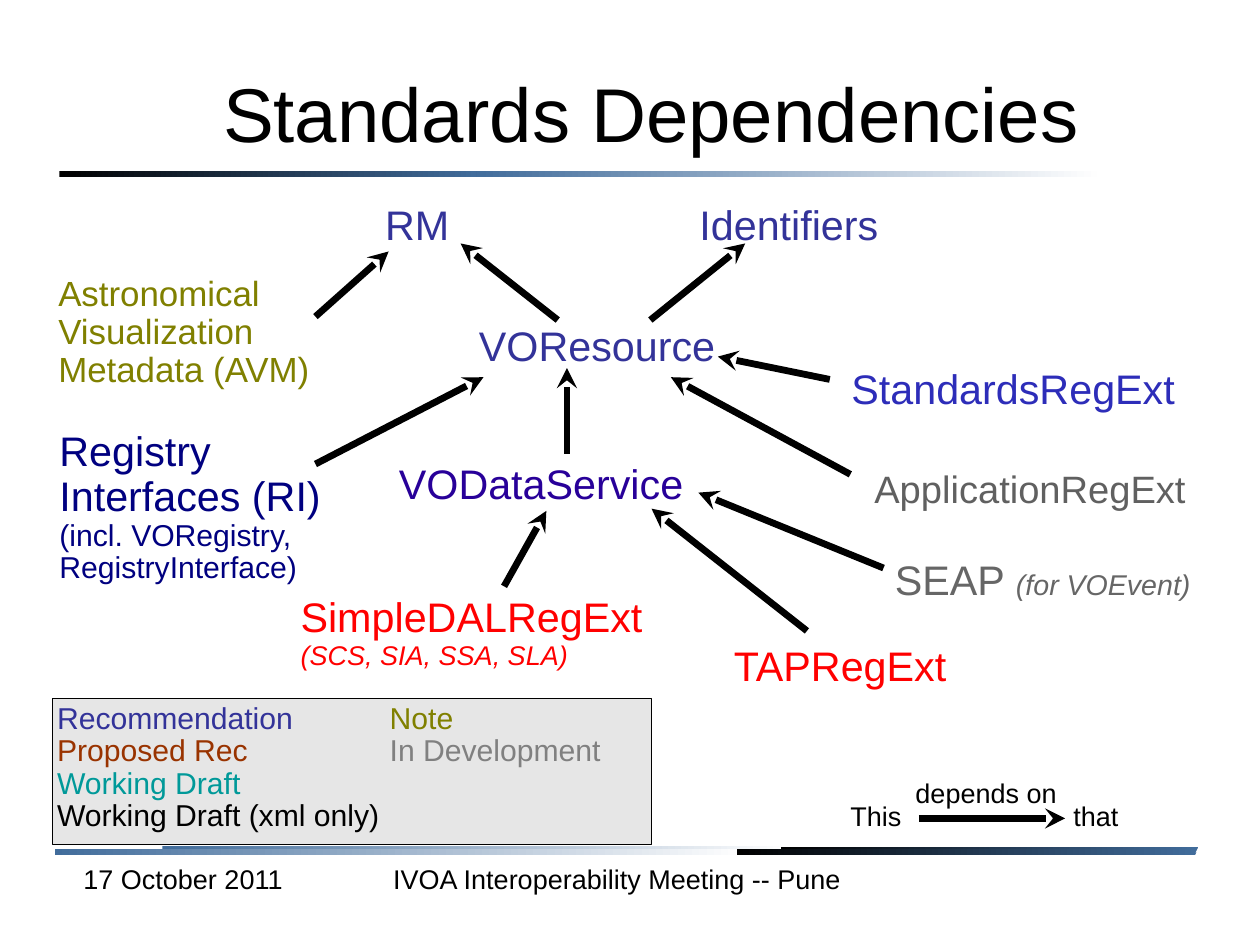
import pptx
import pptx.util
import pptx.dml.color
import pptx.enum.shapes
import pptx.enum.text
import pptx.oxml
import pptx.oxml.ns
from pptx.util import Inches

RGBColor = pptx.dml.color.RGBColor
MSO_SHAPE = pptx.enum.shapes.MSO_SHAPE
NS = pptx.oxml.ns.nsdecls("a")
BLACK = RGBColor(0x00, 0x00, 0x00)
WHITE = RGBColor(0xFF, 0xFF, 0xFF)
PALE = RGBColor(0xFE, 0xFE, 0xFE)
STEEL = RGBColor(0x41, 0x6C, 0x9B)
LIGHT_GRAY = RGBColor(0xE6, 0xE6, 0xE6)
INDIGO = RGBColor(0x33, 0x33, 0x99)
VIOLET = RGBColor(0x28, 0x00, 0x99)
BLUE = RGBColor(0x2D, 0x2D, 0xB9)
NAVY = RGBColor(0x00, 0x00, 0x80)
OLIVE = RGBColor(0x80, 0x80, 0x00)
BROWN = RGBColor(0x99, 0x33, 0x00)
TEAL = RGBColor(0x00, 0x99, 0x99)
RED = RGBColor(0xFF, 0x00, 0x00)
GRAY = RGBColor(0x80, 0x80, 0x80)
DARK_GRAY = RGBColor(0x60, 0x60, 0x60)
MID_GRAY = RGBColor(0x66, 0x66, 0x66)


def write(p, text, size=26, color=BLACK, italic=False, spacing=0.93):
    p.line_spacing = spacing
    p.space_before = p.space_after = pptx.util.Pt(0)
    r = p.add_run()
    r.text = text
    r.font.name = "Arial"
    r.font.size = pptx.util.Pt(size)
    r.font.italic = italic
    r.font.color.rgb = color


def add_box(x, y, w, h, paragraphs, spacing=0.93, pad_x=0, pad_y=0):
    tf = s.shapes.add_textbox(Inches(x), Inches(y), Inches(w), Inches(h)).text_frame
    tf.word_wrap = True
    tf.auto_size = pptx.enum.text.MSO_AUTO_SIZE.SHAPE_TO_FIT_TEXT
    tf.margin_left = Inches(pad_x)
    tf.margin_right = Inches(pad_x or 0.03)
    tf.margin_top = tf.margin_bottom = Inches(pad_y)
    for i, runs in enumerate(paragraphs):
        p = tf.add_paragraph() if i else tf.paragraphs[0]
        for text, size, color, *italic in runs:
            write(p, text, size=size, color=color, italic=bool(italic), spacing=spacing)
    return tf


prs = pptx.Presentation()
prs.slide_width = Inches(28 / 2.54)
prs.slide_height = Inches(21 / 2.54)
s = prs.slides.add_slide(prs.slide_layouts[5])

bars = [
    (4.14, 1.5, 5.46, STEEL, PALE),
    (0.52, 1.5, 3.65, BLACK, STEEL),
    (1.42, 7.4, 5.46, STEEL, PALE),
    (6.83, 7.41, 3.65, BLACK, STEEL),
    (0.48, 7.43, 6.02, STEEL, PALE),
    (6.45, 7.43, 4.02, BLACK, STEEL),
]
for x, y, w, start, end in bars:
    sp = s.shapes.add_shape(MSO_SHAPE.RECTANGLE, Inches(x), Inches(y), Inches(w), Inches(0.05))
    sp.shadow.inherit = False
    sp.line.fill.background()
    sp.fill.gradient()
    sp.fill.gradient_angle = 0
    for stop, color in zip(sp.fill.gradient_stops, (start, end)):
        stop.color.rgb = color

fb = s.shapes.build_freeform(Inches(10.48), Inches(7.44), scale=1.0)
fb.add_line_segments([(Inches(x), Inches(y)) for x, y in ((10.45, 7.49), (10.53, 7.49), (10.56, 7.44))])
slant = s.shapes.add_shape(MSO_SHAPE.PARALLELOGRAM, Inches(10.46), Inches(7.41), Inches(0.11), Inches(0.05))
slant.adjustments[0] = 0.52
for sp in (slant, fb.convert_to_shape()):
    sp.shadow.inherit = False
    sp.fill.solid()
    sp.fill.fore_color.rgb = WHITE
    sp.line.fill.background()

legend = s.shapes.add_shape(MSO_SHAPE.RECTANGLE, Inches(0.46), Inches(6.11), Inches(5.24), Inches(1.28))
legend.shadow.inherit = False
legend.fill.solid()
legend.fill.fore_color.rgb = LIGHT_GRAY
legend.line.color.rgb = BLACK
legend.line.width = pptx.util.Pt(1.05)

title = s.shapes.title
title.left, title.top = Inches(0.92), Inches(0.33)
title.width, title.height = Inches(9.55), Inches(1.38)
tf = title.text_frame
tf.auto_size = pptx.enum.text.MSO_AUTO_SIZE.NONE
tf.vertical_anchor = pptx.enum.text.MSO_ANCHOR.MIDDLE
tf.margin_left = tf.margin_right = Inches(0.08)
tf.margin_top = tf.margin_bottom = 0
tf.paragraphs[0].alignment = pptx.enum.text.PP_ALIGN.CENTER
write(tf.paragraphs[0], "Standards Dependencies", size=48)

labels = [
    (3.37, 1.78, 0.62, "RM", 26, INDIGO),
    (6.12, 1.78, 1.9, "Identifiers", 26, INDIGO),
    (4.19, 2.84, 2.3, "VOResource", 26, INDIGO),
    (3.49, 4.05, 2.83, "VODataService", 26, VIOLET),
    (7.45, 3.22, 3.23, "StandardsRegExt", 26, BLUE),
    (7.65, 4.11, 3.03, "ApplicationRegExt", 24, DARK_GRAY),
    (6.42, 5.64, 2.09, "TAPRegExt", 26, RED),
    (8.01, 6.82, 1.47, "depends on", 17, BLACK),
]
for x, y, w, text, size, color in labels:
    add_box(x, y, w, size / 64, [[(text, size, color)]])

key = add_box(7.44, 7.02, 2.82, 0.27, [[("This\tthat", 17, BLACK)]])
tabs = '<a:tabLst %s><a:tab pos="%d" algn="l"/></a:tabLst>' % (NS, Inches(1.95))
key.paragraphs[0]._p.get_or_add_pPr().append(pptx.oxml.parse_xml(tabs))

add_box(7.83, 4.89, 2.67, 0.41, [[("SEAP ", 26, MID_GRAY), ("(for VOEvent)", 18, MID_GRAY, True)]])
add_box(2.63, 5.21, 3.35, 0.67,
        [[("SimpleDALRegExt", 26, RED)], [("(SCS, SIA, SSA, SLA)", 17, RED, True)]])
add_box(0.51, 2.42, 2.52, 1,
        [[(t, 22, OLIVE)] for t in ("Astronomical", "Visualization", "Metadata (AVM)")], spacing=0.9)
add_box(0.52, 3.77, 2.65, 1.36,
        [[("Registry", 26, NAVY)], [("Interfaces (RI)", 26, NAVY)],
         [("(incl. VORegistry,", 19, NAVY)], [("RegistryInterface)", 19, NAVY)]], spacing=0.9)
add_box(0.5, 6.15, 3.47, 1.15,
        [[("Recommendation", 19, INDIGO)], [("Proposed Rec", 19, BROWN)],
         [("Working Draft", 19, TEAL)], [("Working Draft (xml only)", 19, BLACK)]], spacing=0.9)
add_box(3.41, 6.15, 2.25, 0.58,
        [[("Note", 19, OLIVE)], [("In Development", 19, GRAY)]], spacing=0.9)

footers = [
    (0.65, 2.47, "17 October 2011"),
    (3.36, 4.98, "IVOA Interoperability Meeting -- Pune"),
]
for x, w, text in footers:
    add_box(x, 7.53, w, 0.35, [[(text, 17, BLACK)]], pad_x=0.08, pad_y=0.04)

arrows = [
    (2.76, 2.77, 3.4, 2.2),
    (4.88, 2.8, 4.03, 2.13),
    (4.96, 3.97, 4.96, 3.22),
    (5.69, 2.8, 6.52, 2.13),
    (7.44, 4.15, 5.87, 3.3),
    (7.26, 3.32, 6.28, 3.12),
    (2.76, 4.06, 4.23, 3.3),
    (4.41, 5.13, 4.78, 4.47),
    (7.73, 4.97, 6.11, 4.31),
    (7.06, 5.52, 5.7, 4.45),
    (8.04, 7.16, 9.32, 7.16),
]
for ends in arrows:
    arrow = s.shapes.add_connector(pptx.enum.shapes.MSO_CONNECTOR.STRAIGHT, *map(Inches, ends))
    arrow.line.color.rgb = BLACK
    arrow.line.width = pptx.util.Pt(4.27)
    head = pptx.oxml.parse_xml('<a:tailEnd %s type="stealth"/>' % NS)
    arrow.line._get_or_add_ln().append(head)
    arrow._element.spPr.append(pptx.oxml.parse_xml("<a:effectLst %s/>" % NS))

prs.save("out.pptx")
